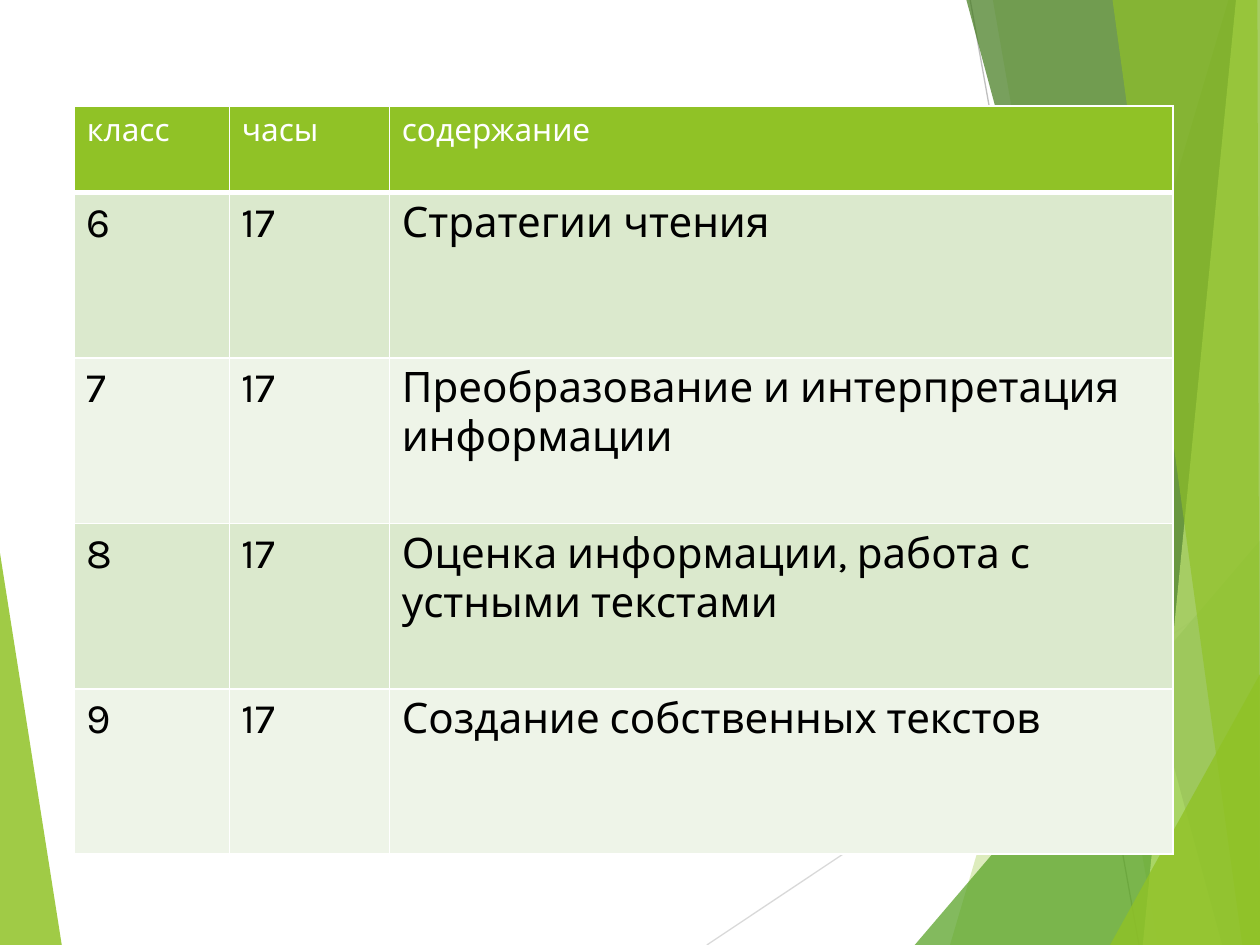
from dataclasses import dataclass

from lxml.etree import SubElement
from pptx import Presentation
from pptx.dml.color import RGBColor
from pptx.enum.shapes import MSO_CONNECTOR
from pptx.oxml import parse_xml
from pptx.oxml.ns import nsdecls, qn
from pptx.util import Pt

PX = 9144
SLIDE_BOX = (0, 0, 1000, 750)
LEFT_BOX = (0, 439, 49, 311)
RIGHT_BOX = (561, 0, 439, 750)
TABLE_BOX = (59, 84, 872, 594)


@dataclass(frozen=True)
class Theme:
    """Colours, font and type sizes of the slide."""
    font: str = "Karla"
    header_size: int = 18
    body_size: int = 24
    lime: str = "90C226"
    green: str = "54A021"
    forest: str = "3F7819"
    pale: str = "C0E474"
    bands: tuple = ("DBE9CD", "EEF4E8")
    white: str = "FFFFFF"
    black: str = "000000"
    rays: tuple = ("D9D9D9", "BFBFBF")


THEME = Theme()

HEADINGS = ("класс", "часы", "содержание")
COURSE = (
    ("6", "17", "Стратегии чтения"),
    ("7", "17", "Преобразование и интерпретация информации"),
    ("8", "17", "Оценка информации, работа с устными текстами"),
    ("9", "17", "Создание собственных текстов"),
)
COLUMN_WIDTHS = (123, 127, 622)
HEADER_HEIGHT = 69

RAYS = (((0, 750), (439, 457)), ((209, 0), (343, 750)))
FACETS = (
    (THEME.lime, 30, ((414, 0), (193, 750), (439, 750), (439, 0))),
    (THEME.lime, 20, ((227, 0), (358, 750), (439, 750), (439, 0))),
    (THEME.green, 72, ((165, 750), (439, 429), (439, 750))),
    (THEME.forest, 70, ((206, 0), (409, 750), (439, 750), (439, 0))),
    (THEME.pale, 70, ((420, 0), (346, 750), (439, 750), (439, 0))),
    (THEME.lime, 65, ((322, 0), (425, 750), (439, 750), (437, 0))),
    (THEME.lime, 80, ((320, 750), (439, 535), (439, 750))),
)


def add_facet(slide, box, color, opacity, corners):
    """Draw a translucent polygon with corners relative to the box."""
    points = [((box[0] + x) * PX, (box[1] + y) * PX) for x, y in corners]
    outline = slide.shapes.build_freeform(*points[0], scale=1.0)
    outline.add_line_segments(points[1:], close=True)
    facet = outline.convert_to_shape()
    facet.shadow.inherit = False
    facet.line.fill.background()
    facet.fill.solid()
    facet.fill.fore_color.rgb = RGBColor.from_string(color)
    tint = facet.fill._xPr.find(f".//{qn('a:srgbClr')}")
    SubElement(tint, qn("a:alpha"), val=str(opacity * 1000))


def add_ray(slide, box, color, start, end):
    """Draw a thin line between two points relative to the box."""
    ends = [(box[i] + point[i]) * PX for point in (start, end) for i in (0, 1)]
    ray = slide.shapes.add_connector(MSO_CONNECTOR.STRAIGHT, *ends)
    ray.line.color.rgb = RGBColor.from_string(color)
    ray.line.width = Pt(0.75)
    SubElement(ray._element.spPr, qn("a:effectLst"))


def add_left_wedge(slide, box):
    """Draw the wedge along the left edge."""
    width, height = box[2:]
    add_facet(slide, box, THEME.lime, 85, ((0, 0), (width, height), (0, height)))


def add_right_facets(slide, box):
    """Draw the rays and overlapping facets on the right."""
    for color, (start, end) in zip(THEME.rays, RAYS):
        add_ray(slide, box, color, start, end)
    for color, opacity, corners in FACETS:
        add_facet(slide, box, color, opacity, corners)


def write_text(frame, text, *, size, color):
    """Write one formatted paragraph into a text frame."""
    run = frame.paragraphs[0].add_run()
    run.text = text
    run.font.name = THEME.font
    run.font.size = Pt(size)
    run.font.bold = False
    run.font.color.rgb = RGBColor.from_string(color)


def format_cell(cell, fill, bottom=1):
    """Fill a cell and give it white borders."""
    cell.fill.solid()
    cell.fill.fore_color.rgb = RGBColor.from_string(fill)
    properties = cell._tc.get_or_add_tcPr()
    for index, (side, width) in enumerate(zip("LRTB", (1, 1, 1, bottom))):
        properties.insert(index, parse_xml(
            f'<a:ln{side} {nsdecls("a")} w="{Pt(width)}"><a:solidFill>'
            f'<a:srgbClr val="{THEME.white}"/></a:solidFill></a:ln{side}>'))


def add_course_table(slide, box):
    """Place the table of classes, hours and content."""
    rows = (HEADINGS, *COURSE)
    table = slide.shapes.add_table(
        len(rows), len(HEADINGS), *(length * PX for length in box)).table
    table.horz_banding = False
    for column, width in zip(table.columns, COLUMN_WIDTHS):
        column.width = width * PX
    body_height = (box[3] - HEADER_HEIGHT) * PX // len(COURSE)
    for number, texts in enumerate(rows):
        header = number == 0
        table.rows[number].height = HEADER_HEIGHT * PX if header else body_height
        fill = THEME.lime if header else THEME.bands[(number - 1) % 2]
        for cell, text in zip(table.rows[number].cells, texts):
            format_cell(cell, fill, bottom=3 if header else 1)
            write_text(cell.text_frame, text,
                       size=THEME.header_size if header else THEME.body_size,
                       color=THEME.white if header else THEME.black)


def main():
    """Build and save the slide."""
    deck = Presentation()
    deck.slide_width, deck.slide_height = (side * PX for side in SLIDE_BOX[2:])
    slide = deck.slides.add_slide(deck.slide_layouts.get_by_name("Blank"))
    slide.background.fill.solid()
    slide.background.fill.fore_color.rgb = RGBColor.from_string(THEME.white)
    add_left_wedge(slide, LEFT_BOX)
    add_right_facets(slide, RIGHT_BOX)
    add_course_table(slide, TABLE_BOX)
    deck.save("out.pptx")


if __name__ == "__main__":
    main()
